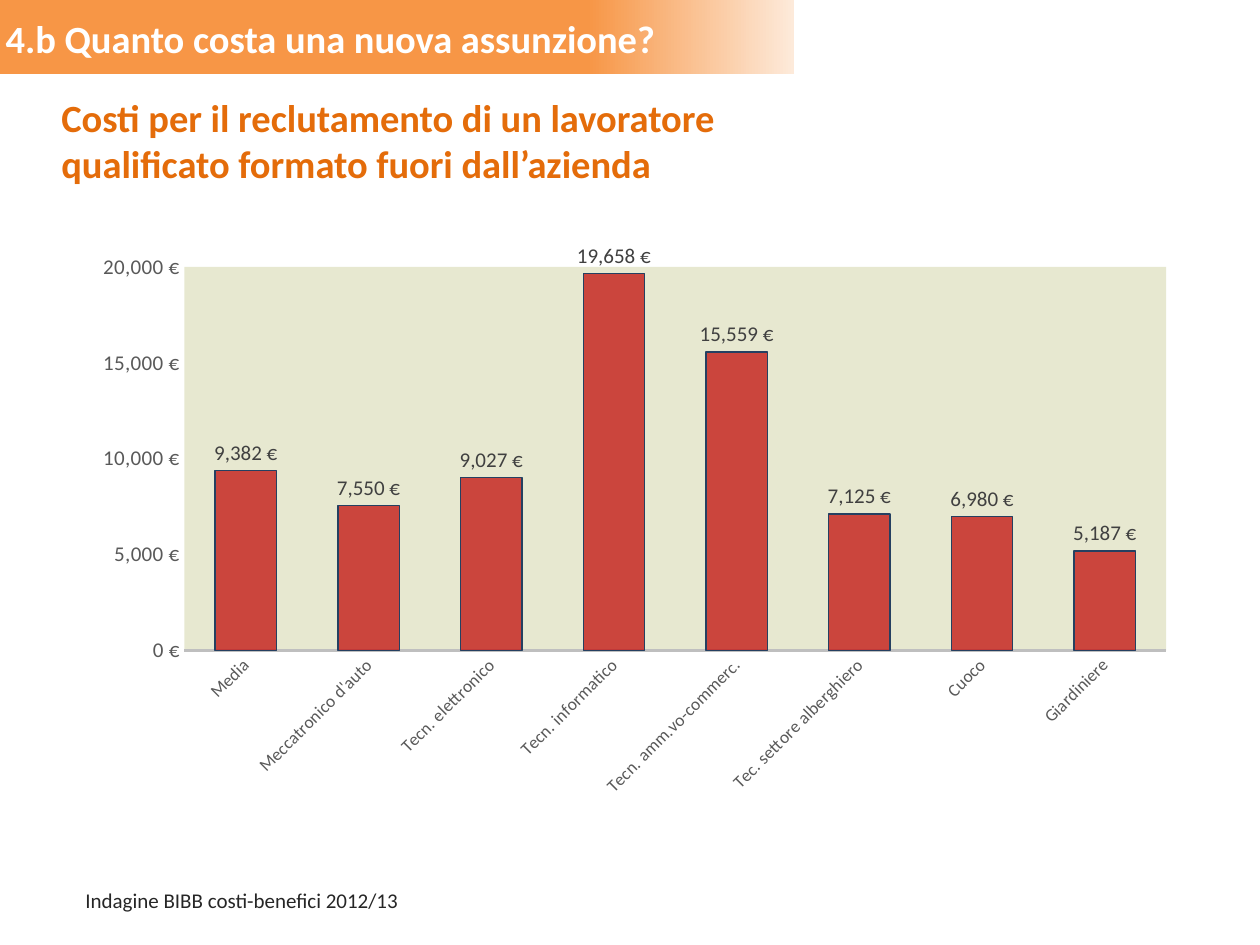
from dataclasses import dataclass
from lxml.etree import SubElement
from pptx import Presentation
from pptx.chart.data import CategoryChartData
from pptx.dml.color import RGBColor
from pptx.enum.chart import XL_CHART_TYPE, XL_LABEL_POSITION, XL_TICK_MARK
from pptx.enum.shapes import MSO_SHAPE
from pptx.enum.text import MSO_ANCHOR, MSO_AUTO_SIZE, PP_ALIGN
from pptx.oxml import parse_xml
from pptx.oxml.ns import nsdecls, qn
from pptx.util import Emu, Pt


@dataclass(frozen=True)
class Theme:
    font: str = "Calibri"
    head: int = 22
    text: int = 12
    small: int = 10
    white: str = "FFFFFF"
    band: str = "F79646"
    fade: str = "FDEADA"
    lead: str = "E46C0A"
    dark: str = "262626"
    label: str = "404040"
    grey: str = "595959"
    rule: str = "BFBFBF"
    plot: str = "E7E8D0"
    bar: str = "C00000"
    edge: str = "254061"


LOOK = Theme()
EURO = '#,##0\\ "€"'
COSTS = {
    "Media": 9382,
    "Meccatronico d'auto": 7550,
    "Tecn. elettronico": 9027,
    "Tecn. informatico": 19658,
    "Tecn. amm.vo-commerc.": 15559,
    "Tec. settore alberghiero": 7125,
    "Cuoco": 6980,
    "Giardiniere": 5187,
}


def px(num):
    return Emu(round(num * 914400 / 126))


def rgb(code):
    return RGBColor.from_string(code)


def assign(item, vals):
    for key, val in vals.items():
        setattr(item, key, val)


def style(font, size, color, bold=False):
    assign(font, {"name": LOOK.font, "size": Pt(size), "bold": bold})
    font.color.rgb = rgb(color)


def place(shape, box):
    assign(shape, dict(zip(("left", "top", "width", "height"), map(px, box))))


def write(shape, text, size, color, bold=False, **form):
    frame = shape.text_frame
    assign(frame, {"word_wrap": True, "auto_size": MSO_AUTO_SIZE.NONE,
                   "vertical_anchor": MSO_ANCHOR.TOP, **form})
    para = frame.paragraphs[0]
    para.alignment = PP_ALIGN.LEFT
    run = para.add_run()
    run.text = text
    style(run.font, size, color, bold)


def add_rect(slide, box):
    rect = slide.shapes.add_shape(MSO_SHAPE.RECTANGLE, *map(px, box))
    rect.shadow.inherit = False
    rect.line.fill.background()
    return rect


def add_band(slide, box):
    fill = add_rect(slide, box).fill
    fill.gradient()
    fill.gradient_angle = 0
    stops = ((0.74, LOOK.band), (1, LOOK.fade))
    for stop, (pos, color) in zip(fill.gradient_stops, stops):
        stop.position = pos
        stop.color.rgb = rgb(color)


def add_title(slide, box, text):
    title = slide.shapes.title
    place(title, box)
    write(title, text, LOOK.head, LOOK.white, True)
    # Bring the title in front of the band
    slide.shapes._spTree.append(title._element)


def add_note(slide, box, text):
    note = add_rect(slide, box)
    note.fill.solid()
    note.fill.fore_color.rgb = rgb(LOOK.white)
    write(note, text, LOOK.text, LOOK.dark,
          word_wrap=False, vertical_anchor=MSO_ANCHOR.MIDDLE)


def set_plot(chart):
    plot = chart._chartSpace.find(".//" + qn("c:plotArea"))
    for old in plot.findall(qn("c:layout")):
        plot.remove(old)
    # Fixed inner plot area
    rules = {"layoutTarget": "inner", "xMode": "edge", "yMode": "edge",
             "x": 0.122, "y": 0.104, "w": 0.812, "h": 0.57}
    layout = parse_xml(f"<c:layout {nsdecls('c')}><c:manualLayout/></c:layout>")
    for key, val in rules.items():
        SubElement(layout[0], qn("c:" + key)).set("val", str(val))
    plot.insert(0, layout)
    plot.append(parse_xml(
        f"<c:spPr {nsdecls('c', 'a')}><a:solidFill>"
        f'<a:srgbClr val="{LOOK.plot}"/></a:solidFill></c:spPr>'))


def set_axes(chart):
    cat, val = chart.category_axis, chart.value_axis
    for axis, size in ((cat, LOOK.small), (val, LOOK.text)):
        assign(axis, {"has_major_gridlines": False,
                      "major_tick_mark": XL_TICK_MARK.NONE,
                      "minor_tick_mark": XL_TICK_MARK.NONE})
        style(axis.tick_labels.font, size, LOOK.grey)
        # Letters spread by 0.2 pt
        axis._element.find(".//" + qn("a:defRPr")).set("spc", "20")
    assign(val, {"minimum_scale": 0, "maximum_scale": 20000,
                 "major_unit": 5000})
    assign(val.tick_labels, {"number_format": EURO,
                             "number_format_is_linked": False})
    val.format.line.fill.background()
    cat.format.line.color.rgb = rgb(LOOK.rule)
    cat.format.line.width = Pt(1.25)
    # Slanted category names
    body = cat._element.find(".//" + qn("a:bodyPr"))
    body.set("rot", str(-45 * 60000))
    body.set("vert", "horz")


def set_bars(chart):
    plot = chart.plots[0]
    assign(plot, {"gap_width": 100, "vary_by_categories": False,
                  "has_data_labels": True})
    labels = plot.data_labels
    assign(labels, {"show_value": True, "number_format": EURO,
                    "number_format_is_linked": False,
                    "position": XL_LABEL_POSITION.OUTSIDE_END})
    style(labels.font, LOOK.text, LOOK.label)
    look = plot.series[0].format
    look.fill.solid()
    look.fill.fore_color.rgb = rgb(LOOK.bar)
    look.line.color.rgb = rgb(LOOK.edge)
    look.line.width = Pt(0.75)
    # Bars at 70 % opacity
    tint = plot.series[0]._element.find(
        f"{qn('c:spPr')}/{qn('a:solidFill')}/{qn('a:srgbClr')}")
    SubElement(tint, qn("a:alpha")).set("val", "70000")


def add_bars(slide, box, costs):
    data = CategoryChartData()
    data.categories = list(costs)
    data.add_series("Series 1", list(costs.values()))
    chart = slide.shapes.add_chart(
        XL_CHART_TYPE.COLUMN_CLUSTERED, *map(px, box), data).chart
    assign(chart, {"has_legend": False, "has_title": False})
    assign(chart.font, {"name": LOOK.font, "size": Pt(LOOK.small)})
    set_plot(chart)
    set_axes(chart)
    set_bars(chart)


def main():
    deck = Presentation()
    assign(deck, {"slide_width": px(1260), "slide_height": px(945)})
    slide = deck.slides.add_slide(deck.slide_layouts[5])
    # Header band and source note
    add_band(slide, (0, 0, 794, 74))
    add_note(slide, (73, 871, 442, 59), "Indagine BIBB costi-benefici 2012/13")
    add_title(slide, (-7, 9, 835, 59), "4.b Quanto costa una nuova assunzione?")
    # Cost chart and its heading
    add_bars(slide, (37, 197, 1209, 673), COSTS)
    lead = slide.shapes.add_textbox(*map(px, (49, 88, 834, 106)))
    write(lead, "Costi per il reclutamento di un lavoratore qualificato "
          "formato fuori dall’azienda", LOOK.head, LOOK.lead, True)
    deck.save("out.pptx")


if __name__ == "__main__":
    main()
